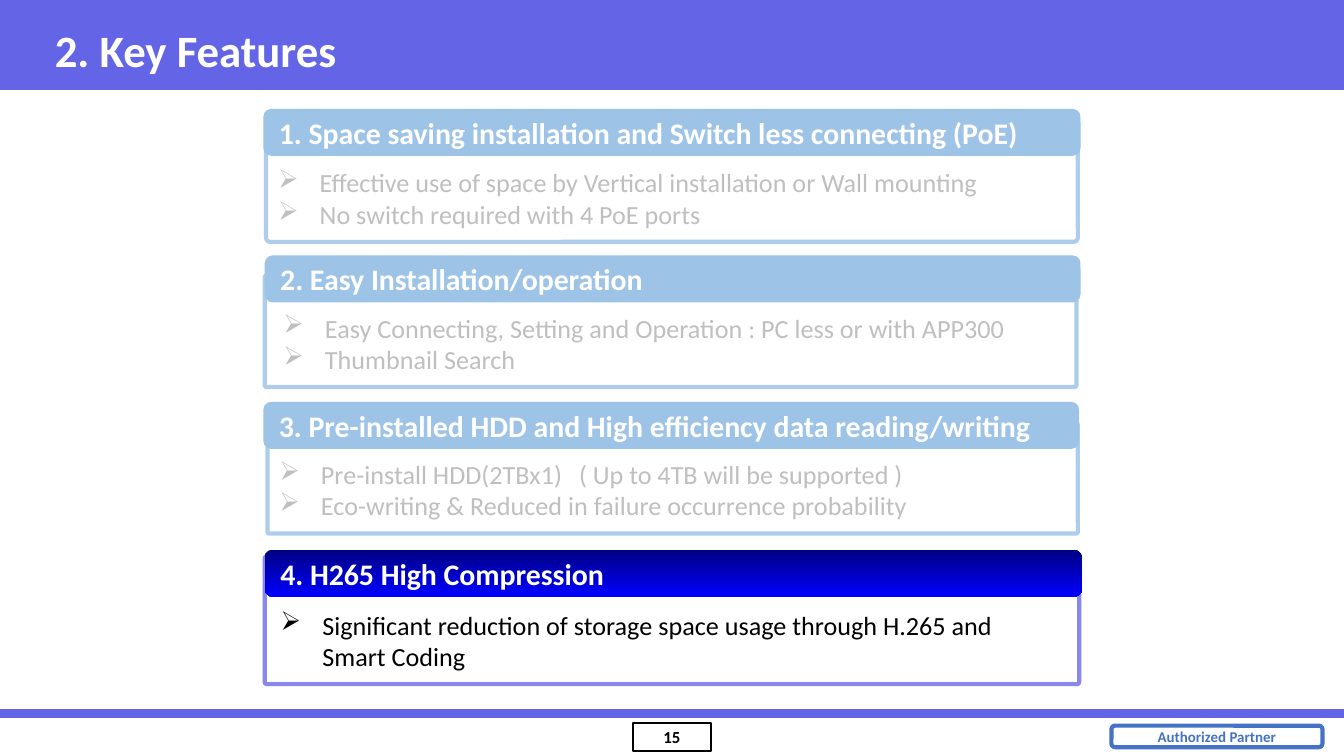
"""Build the key features slide with four feature cards, the last one highlighted."""
from dataclasses import dataclass

from lxml.etree import SubElement
from pptx import Presentation
from pptx.dml.color import RGBColor
from pptx.enum.shapes import MSO_CONNECTOR, MSO_SHAPE
from pptx.enum.text import MSO_ANCHOR, MSO_AUTO_SIZE, PP_ALIGN
from pptx.oxml.ns import qn
from pptx.util import Inches, Pt


@dataclass(frozen=True)
class Theme:
    font: str = "Calibri"
    band: str = "6464E6"
    white: str = "FFFFFF"
    black: str = "000000"
    badge: str = "4472C4"
    muted_header: str = "9DC3E6"
    muted_border: str = "AECDEA"
    muted_text: str = "BFBFBF"
    active_border: str = "8787EC"
    gradient_top: str = "000082"
    gradient_bottom: str = "0000FF"
    title_size: int = 24
    header_size: int = 16
    body_size: int = 14
    number_size: int = 9
    badge_size: int = 8


def add_box(kind, bounds, fill=None, border=None, border_width=2.25, corner=None):
    shape = slide.shapes.add_shape(kind, *map(Inches, bounds))
    shape.shadow.inherit = False
    if corner is not None:
        shape.adjustments[0] = corner
    if fill:
        shape.fill.solid()
        shape.fill.fore_color.rgb = RGBColor.from_string(fill)
    else:
        shape.fill.background()
    if border:
        shape.line.color.rgb = RGBColor.from_string(border)
        shape.line.width = Pt(border_width)
    else:
        shape.line.fill.background()
    return shape


def write(shape, text, size, color, bold=False, align=PP_ALIGN.LEFT, bullet=None, tab=None):
    frame = shape.text_frame
    frame.word_wrap = True
    frame.vertical_anchor = MSO_ANCHOR.MIDDLE
    frame.text = text
    for paragraph in frame.paragraphs:
        paragraph.alignment = align
        properties = paragraph._p.get_or_add_pPr()
        if bullet:
            properties.set("marL", str(Inches(0.31)))
            properties.set("indent", str(-Inches(0.31)))
            SubElement(properties, qn("a:buChar"), char=bullet)
        if tab and "\t" in paragraph.text:
            stops = SubElement(properties, qn("a:tabLst"))
            SubElement(stops, qn("a:tab"), pos=str(Inches(tab)), algn="l")
        for run in paragraph.runs:
            run.font.name = theme.font
            run.font.size = Pt(size)
            run.font.bold = bold
            run.font.color.rgb = RGBColor.from_string(color)


theme = Theme()
presentation = Presentation()
presentation.slide_width = Inches(10)
presentation.slide_height = Inches(10) * 9 // 16
slide = presentation.slides.add_slide(presentation.slide_layouts[6])

add_box(MSO_SHAPE.RECTANGLE, (0, 0, 10, 0.67), fill=theme.band)
title = slide.shapes.add_textbox(Inches(0.31), Inches(0.08), Inches(9.26), Inches(0.58))
write(title, "2. Key Features", theme.title_size, theme.white, bold=True)

page_number = add_box(MSO_SHAPE.RECTANGLE, (4.71, 5.38, 0.58, 0.21), border=theme.black, border_width=1)
frame = page_number.text_frame
frame.margin_left = frame.margin_right = frame.margin_top = frame.margin_bottom = Inches(0.03)
write(page_number, "15", theme.number_size, theme.black, bold=True, align=PP_ALIGN.CENTER)

footer_line = slide.shapes.add_connector(
    MSO_CONNECTOR.STRAIGHT, Inches(0), Inches(5.31), Inches(10), Inches(5.31))
footer_line.line.color.rgb = RGBColor.from_string(theme.band)
footer_line.line.width = Pt(4.5)
SubElement(footer_line._element.spPr, qn("a:effectLst"))

badge = add_box(MSO_SHAPE.ROUNDED_RECTANGLE, (8.27, 5.4, 1.57, 0.16), border=theme.badge)
write(badge, "Authorized Partner", theme.badge_size, theme.badge, bold=True, align=PP_ALIGN.CENTER)

cards = [
    ("1. Space saving installation and Switch less connecting (PoE)",
     "Effective use of space by Vertical installation or Wall mounting\n"
     "No switch required with 4 PoE ports",
     (1.96, 0.81, 6.08, 0.35), (1.98, 1.04, 6.04, 0.76), 0.04, (1.97, 1.19, 5.65, 0.57)),
    ("2. Easy Installation/operation",
     "Easy Connecting, Setting and Operation : PC less or with APP300\nThumbnail Search",
     (1.97, 1.9, 6.07, 0.35), (1.97, 2.05, 6.04, 0.83), 0.016, (2.01, 2.27, 5.95, 0.57)),
    ("3. Pre-installed HDD and High efficiency data reading/writing",
     "Pre-install HDD(2TBx1)\t( Up to 4TB will be supported )\n"
     "Eco-writing & Reduced in failure occurrence probability",
     (1.96, 2.99, 6.07, 0.35), (1.99, 3.15, 6.03, 0.82), 0.016, (1.98, 3.36, 5.25, 0.57)),
    ("4. H265 High Compression",
     "Significant reduction of storage space usage through H.265 and Smart Coding",
     (1.97, 4.09, 6.08, 0.35), (1.97, 4.14, 6.06, 0.95), 0.016, (1.99, 4.48, 5.89, 0.57)),
]

for index, (heading, points, header_bounds, frame_bounds, corner, text_bounds) in enumerate(cards):
    active = index == len(cards) - 1
    add_box(MSO_SHAPE.ROUNDED_RECTANGLE, frame_bounds, corner=corner,
            border=theme.active_border if active else theme.muted_border)

    body = slide.shapes.add_textbox(*map(Inches, text_bounds))
    write(body, points, theme.body_size, theme.black if active else theme.muted_text,
          bullet="➢", tab=2.23)
    body.text_frame.auto_size = MSO_AUTO_SIZE.SHAPE_TO_FIT_TEXT

    header = add_box(MSO_SHAPE.ROUNDED_RECTANGLE, header_bounds, fill=theme.muted_header)
    if active:
        header.fill.gradient()
        header.fill.gradient_angle = 270
        for stop, color in zip(header.fill.gradient_stops, (theme.gradient_top, theme.gradient_bottom)):
            stop.color.rgb = RGBColor.from_string(color)
    write(header, heading, theme.header_size, theme.white, bold=True)

presentation.save("out.pptx")
